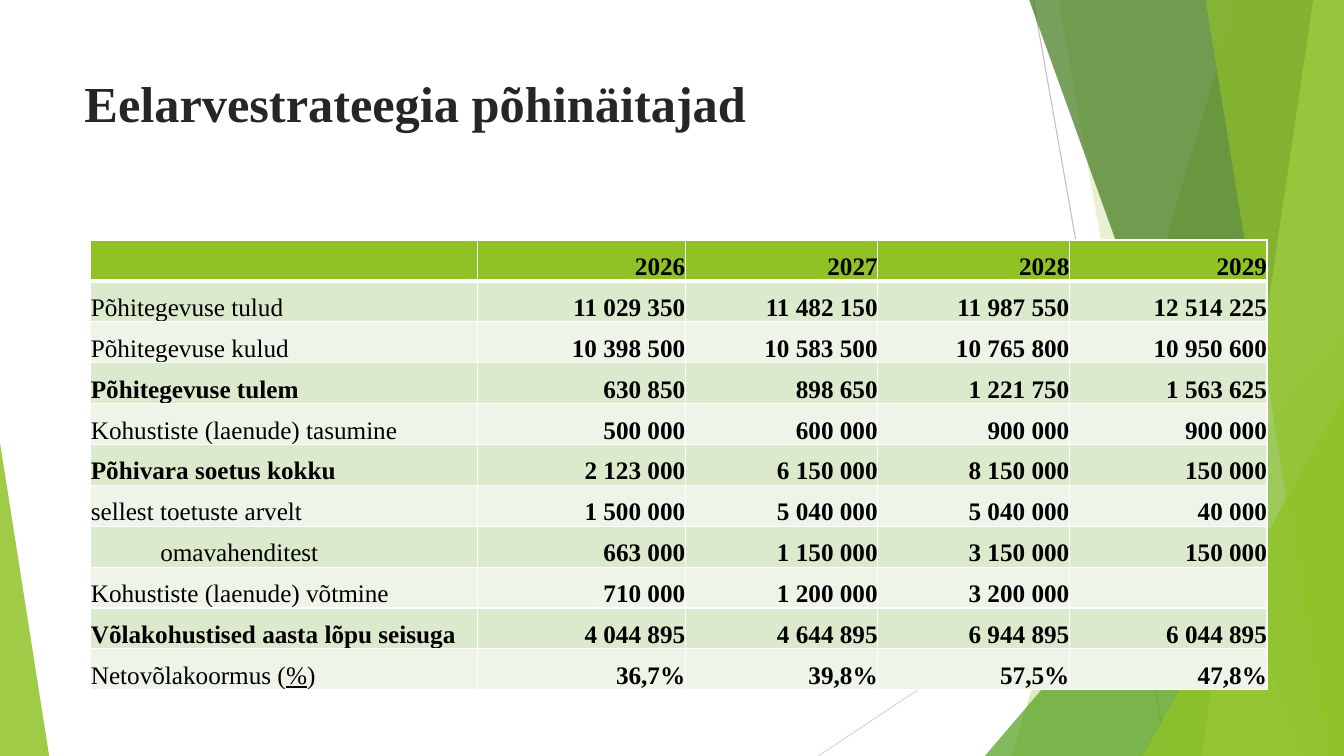
from dataclasses import dataclass

from lxml.etree import SubElement
from pptx import Presentation
from pptx.dml.color import RGBColor
from pptx.enum.shapes import MSO_CONNECTOR as CONN, MSO_SHAPE as SHAPE
from pptx.enum.text import MSO_ANCHOR as ANCHOR, PP_ALIGN as ALIGN
from pptx.oxml.ns import qn
from pptx.util import Cm, Pt


@dataclass(frozen=True)
class Theme:
    font: str = "Times New Roman"
    title_size: int = 36
    table_size: int = 18
    title: str = "262626"
    text: str = "000000"
    white: str = "FFFFFF"
    lime: str = "90C226"
    green: str = "54A021"
    forest: str = "3F7819"
    pale: str = "C0E474"
    dark_line: str = "BFBFBF"
    light_line: str = "D9D9D9"
    bands: tuple = ("DBE9CD", "EEF4E8")


THEME = Theme()
WIDTH, HEIGHT = 33.87, 19.05
COLUMNS = (9.75, 5.23, 4.85, 4.83, 4.98)
ROW_HEIGHT = 1.03
INDENT = 1.75

YEARS = ("2026", "2027", "2028", "2029")
ROWS = (
    ("Põhitegevuse tulud", "11 029 350", "11 482 150", "11 987 550", "12 514 225"),
    ("Põhitegevuse kulud", "10 398 500", "10 583 500", "10 765 800", "10 950 600"),
    ("Põhitegevuse tulem", "630 850", "898 650", "1 221 750", "1 563 625"),
    ("Kohustiste (laenude) tasumine", "500 000", "600 000", "900 000", "900 000"),
    ("Põhivara soetus kokku", "2 123 000", "6 150 000", "8 150 000", "150 000"),
    ("sellest toetuste arvelt", "1 500 000", "5 040 000", "5 040 000", "40 000"),
    ("omavahenditest", "663 000", "1 150 000", "3 150 000", "150 000"),
    ("Kohustiste (laenude) võtmine", "710 000", "1 200 000", "3 200 000", ""),
    ("Võlakohustised aasta lõpu seisuga", "4 044 895", "4 644 895", "6 944 895", "6 044 895"),
    ("Netovõlakoormus (%)", "36,7%", "39,8%", "57,5%", "47,8%"),
)
TOTALS = {"Põhitegevuse tulem", "Põhivara soetus kokku", "Võlakohustised aasta lõpu seisuga"}
INDENTED = {"omavahenditest"}


def rgb(color):
    return RGBColor.from_string(color)


def style_run(r, size, color, bold):
    r.font.name = THEME.font
    r.font.size = Pt(size)
    r.font.color.rgb = rgb(color)
    r.font.bold = bold


def paint(sp, color, opacity):
    sp.shadow.inherit = False
    sp.line.fill.background()
    sp.fill.solid()
    sp.fill.fore_color.rgb = rgb(color)
    clr = sp.fill._xPr.find(qn("a:solidFill")).find(qn("a:srgbClr"))
    SubElement(clr, qn("a:alpha"), val=str(opacity * 1000))


def add_line(slide, x1, y1, x2, y2, color):
    line = slide.shapes.add_connector(CONN.STRAIGHT, Cm(x1), Cm(y1), Cm(x2), Cm(y2))
    line.line.color.rgb = rgb(color)
    line.line.width = Pt(0.75)
    SubElement(line._element.spPr, qn("a:effectLst"))


def add_band(slide, top_x, bottom_x, color, opacity):
    builder = slide.shapes.build_freeform(Cm(top_x), Cm(-0.02))
    corners = ((WIDTH, -0.02), (WIDTH, HEIGHT), (bottom_x, HEIGHT))
    builder.add_line_segments([(Cm(x), Cm(y)) for x, y in corners], close=True)
    paint(builder.convert_to_shape(), color, opacity)


def add_triangle(slide, left, top, width, apex, color, opacity):
    sp = slide.shapes.add_shape(
        SHAPE.ISOSCELES_TRIANGLE, Cm(left), Cm(top), Cm(width), Cm(HEIGHT - top))
    sp.adjustments[0] = apex
    paint(sp, color, opacity)


def add_backdrop(slide):
    add_line(slide, 26.04, 0, 29.41, HEIGHT, THEME.dark_line)
    add_line(slide, WIDTH, 10.24, 20.62, HEIGHT, THEME.light_line)
    add_band(slide, 31.19, 25.5, THEME.lime, 30)
    add_band(slide, 26.67, 30.05, THEME.lime, 20)
    add_triangle(slide, 24.82, 8.46, 9.05, 1, THEME.green, 72)
    add_band(slide, 25.93, 32.79, THEME.forest, 70)
    add_band(slide, 33.1, 30.28, THEME.pale, 70)
    add_band(slide, 30.38, 33.48, THEME.lime, 65)
    add_triangle(slide, 28.8, 9.98, 5.07, 1, THEME.lime, 80)
    add_triangle(slide, 0, 11.15, 1.24, 0, THEME.lime, 85)


def add_title(slide, text):
    tf = slide.shapes.add_textbox(Cm(1.88), Cm(1.7), Cm(23.88), Cm(3.66)).text_frame
    tf.word_wrap = True
    tf.text = text
    style_run(tf.paragraphs[0].runs[0], THEME.title_size, THEME.title, True)


def set_borders(cell, top, bottom):
    tc_pr = cell._tc.get_or_add_tcPr()
    for side, width in (("L", 1), ("R", 1), ("T", top), ("B", bottom)):
        ln = SubElement(tc_pr, qn(f"a:ln{side}"), w=str(Pt(width)))
        fill = SubElement(ln, qn("a:solidFill"))
        SubElement(fill, qn("a:srgbClr"), val=THEME.white)


def fill_cell(cell, parts, fill, align, bold):
    cell.margin_left = cell.margin_right = cell.margin_top = cell.margin_bottom = 0
    cell.vertical_anchor = ANCHOR.BOTTOM
    cell.fill.solid()
    cell.fill.fore_color.rgb = rgb(fill)
    p = cell.text_frame.paragraphs[0]
    p.alignment = align
    p.font.size = Pt(THEME.table_size)
    for i, part in enumerate(parts):
        r = p.add_run()
        r.text = part
        style_run(r, THEME.table_size, THEME.text, bold)
        if i == 1:
            r.font.underline = True


def add_budget_table(slide):
    data = (("", *YEARS), *ROWS)
    table = slide.shapes.add_table(
        len(data), len(COLUMNS), Cm(2.29), Cm(6.05),
        Cm(sum(COLUMNS)), Cm(ROW_HEIGHT * len(data))).table
    for column, width in zip(table.columns, COLUMNS):
        column.width = Cm(width)
    for i, values in enumerate(data):
        table.rows[i].height = Cm(ROW_HEIGHT)
        fill = THEME.bands[(i - 1) % 2] if i else THEME.lime
        for j, value in enumerate(values):
            cell = table.cell(i, j)
            set_borders(cell, 3 if i == 1 else 1, 3 if i == 0 else 1)
            if j:
                parts = [value] if value else []
                fill_cell(cell, parts, fill, ALIGN.RIGHT, True)
                continue
            parts = [part for part in value.partition("%") if part]
            fill_cell(cell, parts, fill, ALIGN.LEFT, value in TOTALS)
            if value in INDENTED:
                p_pr = cell.text_frame.paragraphs[0]._p.get_or_add_pPr()
                p_pr.set("marL", str(Cm(INDENT)))


def main():
    prs = Presentation()
    prs.slide_width, prs.slide_height = Cm(WIDTH), Cm(HEIGHT)
    slide = prs.slides.add_slide(prs.slide_layouts[6])
    add_backdrop(slide)
    add_title(slide, "Eelarvestrateegia põhinäitajad")
    add_budget_table(slide)
    prs.save("out.pptx")


if __name__ == "__main__":
    main()
